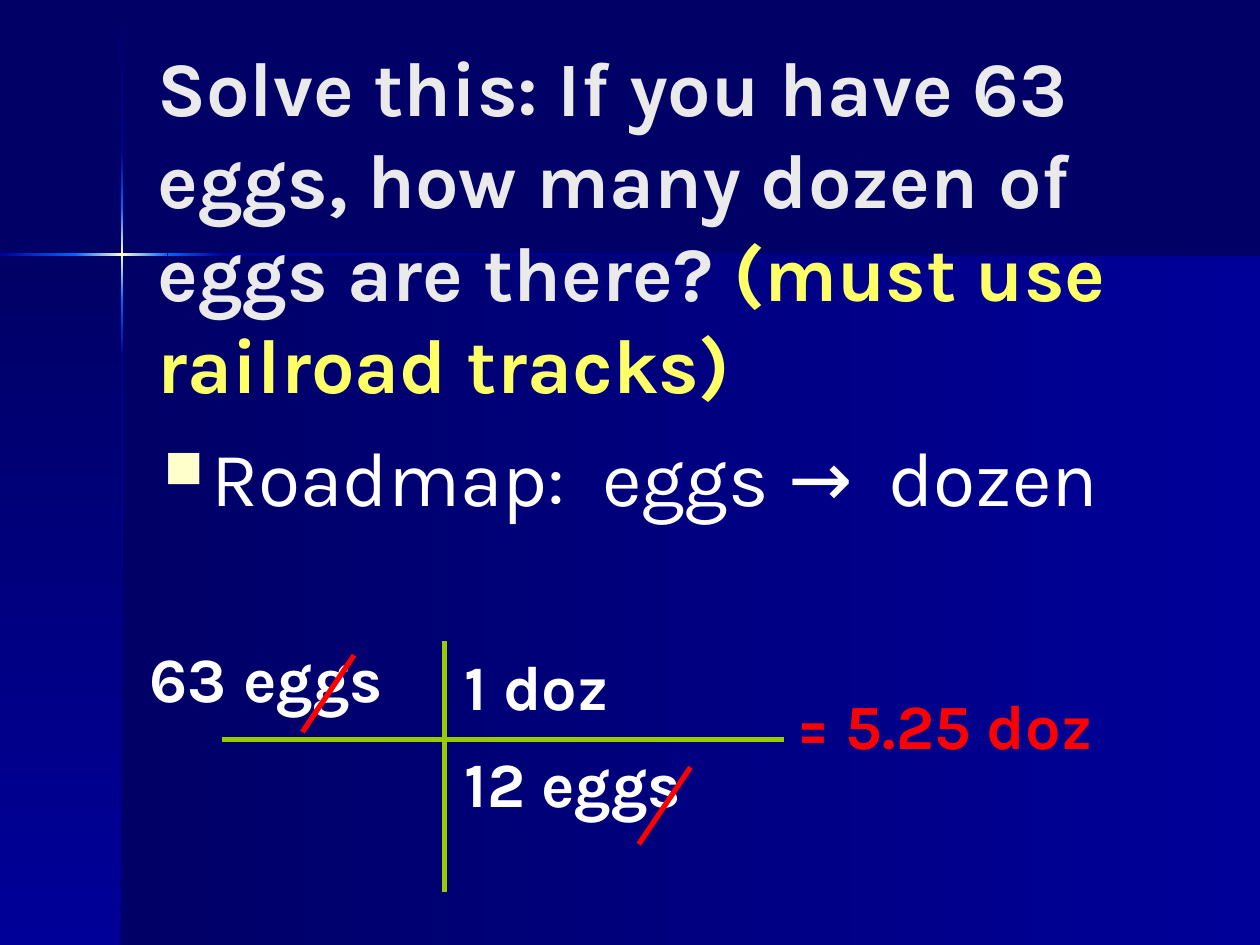
"""Build the egg-to-dozen unit conversion slide."""
import copy

import pptx
import pptx.dml.color
import pptx.enum.shapes
import pptx.enum.text
import pptx.oxml
import pptx.oxml.ns
import pptx.util
from lxml import etree

Inches = pptx.util.Inches
Pt = pptx.util.Pt
RGBColor = pptx.dml.color.RGBColor
qn = pptx.oxml.ns.qn

NAVY = RGBColor(0x00, 0x00, 0x66)
BLUE = RGBColor(0x00, 0x00, 0x99)
GLOW = RGBColor(0x00, 0x66, 0xFF)
CREAM = RGBColor(0xFF, 0xFF, 0xCC)
PALE = RGBColor(0xEA, 0xEA, 0xEA)
YELLOW = RGBColor(0xFF, 0xFF, 0x66)
WHITE = RGBColor(0xFF, 0xFF, 0xFF)
GREEN = RGBColor(0x99, 0xCC, 0x00)
RED = RGBColor(0xFF, 0x00, 0x00)

RIGHT, DOWN = 0, 270
TOP = pptx.enum.text.MSO_ANCHOR.TOP
MIDDLE = pptx.enum.text.MSO_ANCHOR.MIDDLE


class Deck:
    """Hold the style and the current slide."""

    face = "Karla"
    hang = Inches(0.38)
    width = Pt(3)

    def __init__(self, slide):
        self.slide = slide
        fill = slide.background.fill
        fill.solid()
        fill.fore_color.rgb = NAVY

    def bar(self, left, top, width, height, angle, *tints):
        box = self.slide.shapes.add_shape(
            pptx.enum.shapes.MSO_SHAPE.RECTANGLE,
            Inches(left), Inches(top), Inches(width), Inches(height))
        box.shadow.inherit = False
        box.line.fill.background()
        box.fill.gradient()
        box.fill.gradient_angle = angle
        stops = box._element.spPr.find(".//" + qn("a:gsLst"))
        for _ in tints[2:]:
            stops.append(copy.deepcopy(stops[0]))
        for rank, (stop, tint) in enumerate(zip(box.fill.gradient_stops, tints)):
            stop.position = rank / (len(tints) - 1)
            stop.color.rgb = tint

    def text(self, left, top, width, height, lines, size=36, bold=True,
             anchor=TOP, hang=True, gap=0, bullet=None):
        box = self.slide.shapes.add_textbox(
            Inches(left), Inches(top), Inches(width), Inches(height))
        frame = box.text_frame
        frame.word_wrap = True
        frame.vertical_anchor = anchor
        style = {"name": self.face, "size": Pt(size), "bold": bold}
        for rank, runs in enumerate(lines):
            para = frame.add_paragraph() if rank else frame.paragraphs[0]
            if rank or bullet:
                para.space_before = Pt(gap)
            if hang:
                props = para._p.get_or_add_pPr()
                props.set("marL", str(self.hang))
                props.set("indent", str(-self.hang))
            if bullet:
                self.mark(para, bullet)
            for words, tint in runs:
                run = para.add_run()
                run.text = words
                for key, value in style.items():
                    setattr(run.font, key, value)
                run.font.color.rgb = tint

    def mark(self, para, sign):
        props = para._p.get_or_add_pPr()
        tint = etree.SubElement(props, qn("a:buClr"))
        etree.SubElement(tint, qn("a:srgbClr"), val=str(CREAM))
        etree.SubElement(props, qn("a:buSzPct"), val="70000")
        etree.SubElement(props, qn("a:buChar"), char=sign)

    def line(self, start, end, tint):
        rule = self.slide.shapes.add_connector(
            pptx.enum.shapes.MSO_CONNECTOR.STRAIGHT,
            *map(Inches, start + end))
        rule.line.color.rgb = tint
        rule.line.width = self.width
        etree.SubElement(rule._element.spPr, qn("a:effectLst"))


def main():
    show = pptx.Presentation()
    show.slide_width, show.slide_height = Inches(10), Inches(7.5)
    deck = Deck(show.slides.add_slide(show.slide_layouts[6]))

    deck.bar(0.97, 2.02, 9.03, 5.48, RIGHT, NAVY, BLUE)
    deck.bar(0, 2.02, 0.97, 5.48, DOWN, NAVY, BLUE)

    for top, tall, *tints in (
            (0.01, 1.2, NAVY, BLUE), (2.82, 4.68, BLUE, NAVY),
            (2.38, 0.44, GLOW, BLUE), (1.21, 0.44, BLUE, GLOW),
            (1.65, 0.73, GLOW, CREAM, GLOW)):
        deck.bar(0.96, top, 0.02, tall, DOWN, *tints)
    for left, wide, *tints in (
            (1.77, 8.23, BLUE, NAVY), (0, 0.61, BLUE, GLOW),
            (1.33, 0.44, GLOW, BLUE), (0.6, 0.73, GLOW, CREAM, GLOW)):
        deck.bar(left, 2.01, wide, 0.02, RIGHT, *tints)

    deck.text(1.15, 0.26, 8.25, 3.04, [[
        ("Solve this: If you have 63 eggs, how many dozen of eggs are there? ", PALE),
        ("(must use railroad tracks)", YELLOW)]],
        size=44, anchor=MIDDLE, hang=False)
    deck.text(1.2, 3.36, 8.25, 1.02, [[("Roadmap:  eggs →  dozen", WHITE)]],
              size=44, bold=False, gap=9, bullet="■")

    deck.text(1.09, 5.03, 2.43, 0.86, [[("63 eggs", WHITE)]])
    deck.line((1.76, 5.87), (6.22, 5.87), GREEN)
    deck.line((3.53, 5.09), (3.53, 7.08), GREEN)
    deck.text(3.59, 5.09, 3.05, 1.65,
              [[("1 doz", WHITE)], [("12 eggs", WHITE)]], gap=12)
    for left, top in ((2.4, 5.2), (5.07, 6.09)):
        deck.line((left + 0.41, top), (left, top + 0.61), RED)
    deck.text(6.22, 5.4, 3.78, 0.86, [[("= 5.25 doz", RED)]])

    show.save("out.pptx")


if __name__ == "__main__":
    main()
